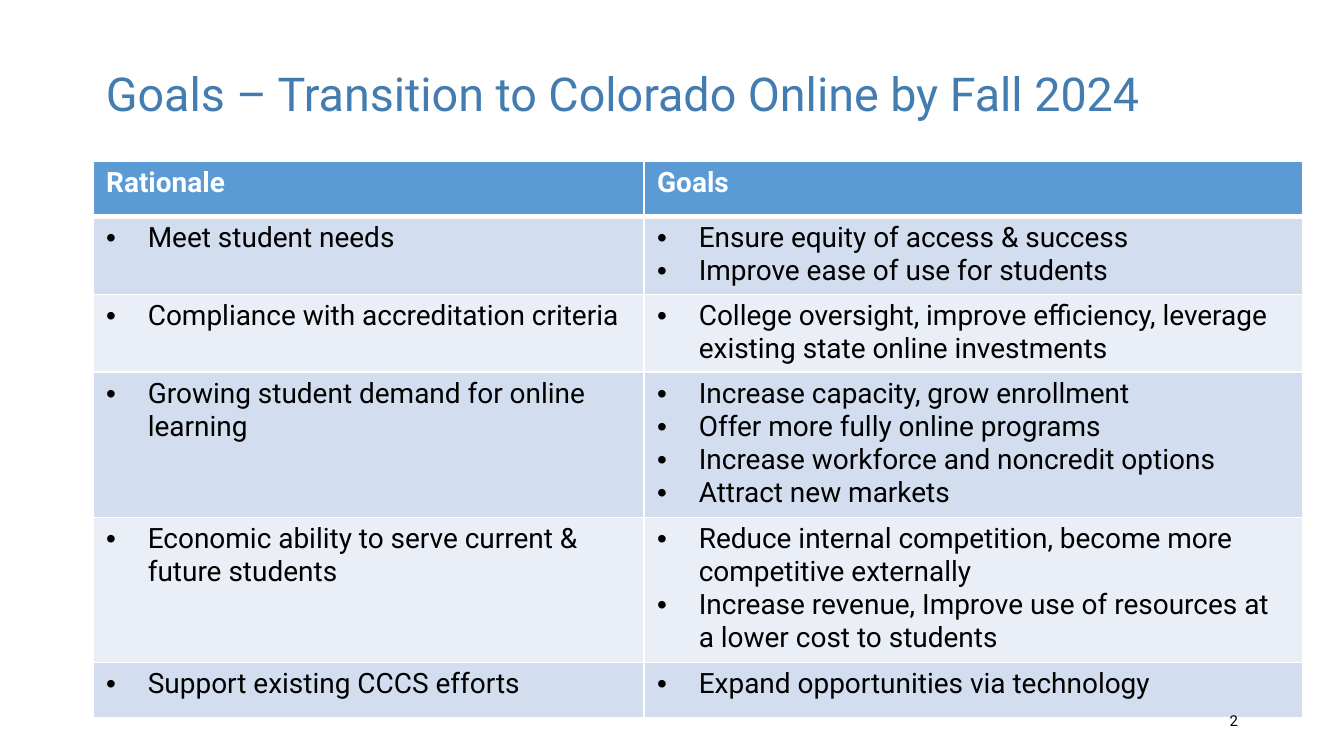
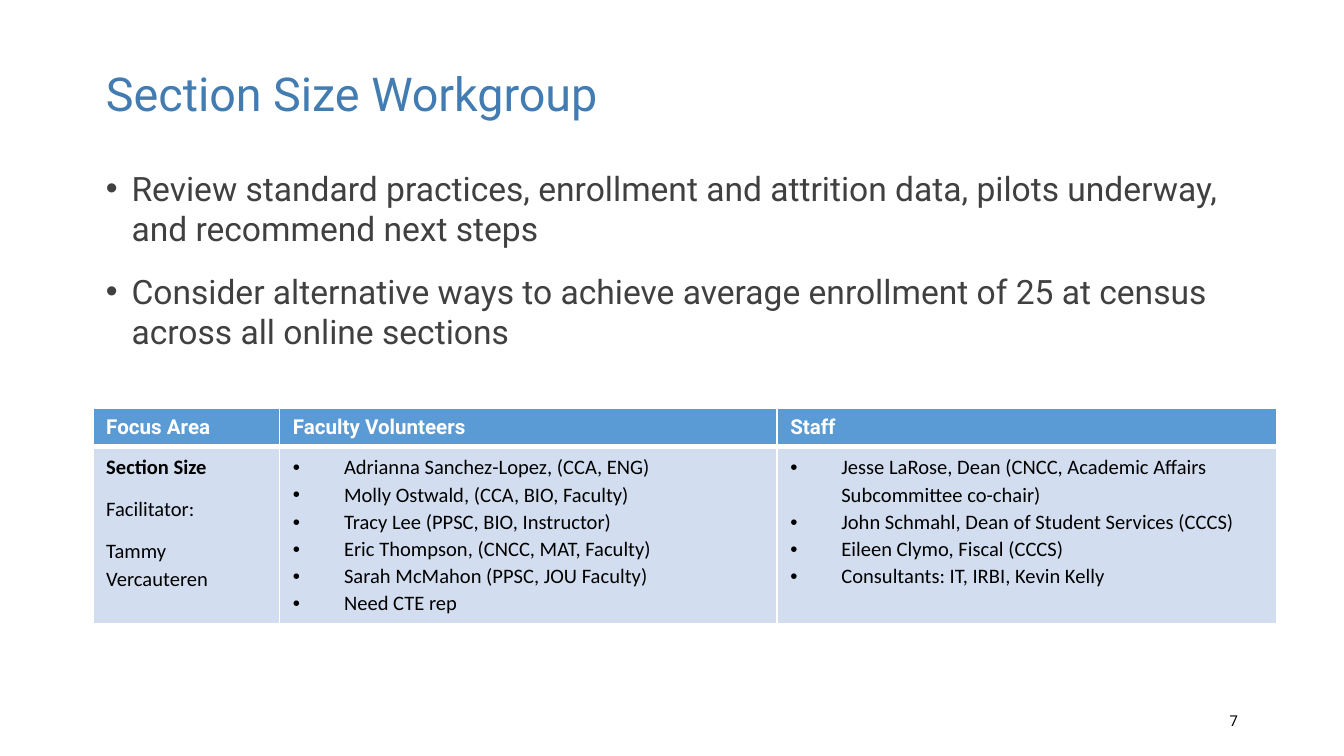
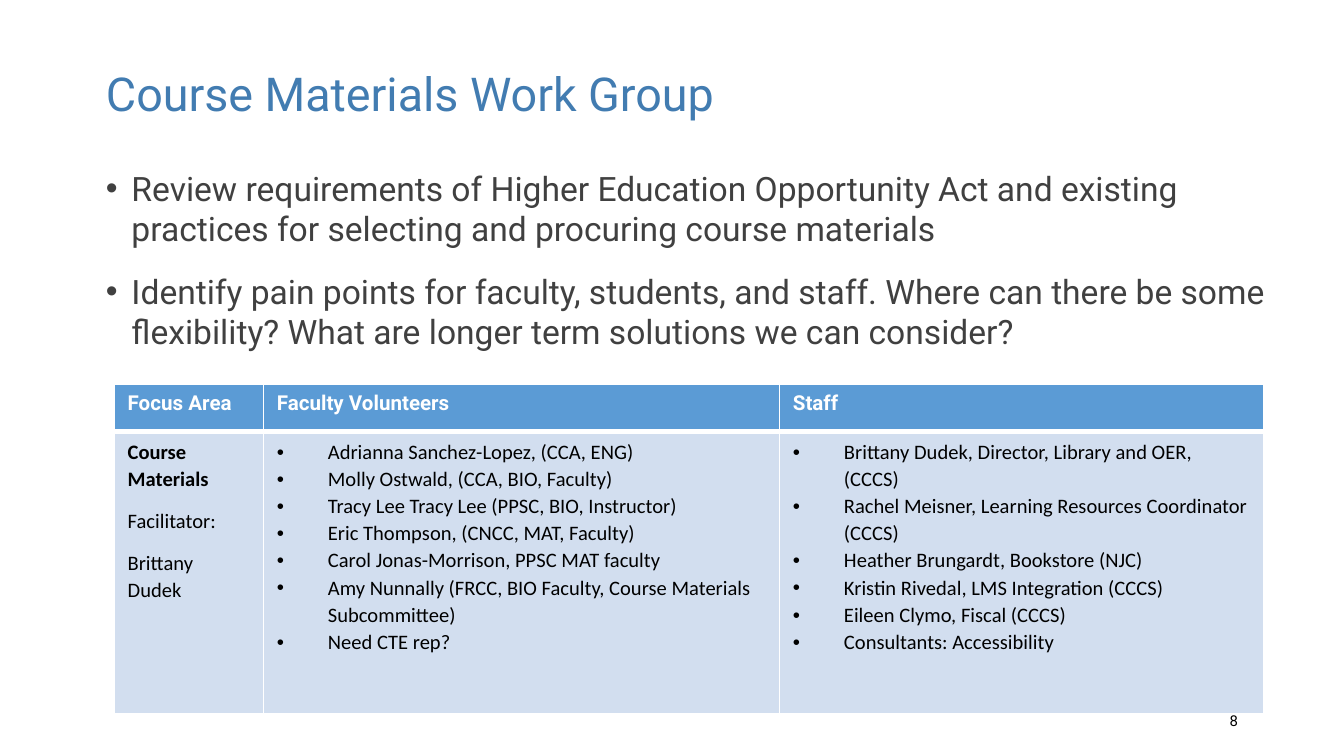
from dataclasses import dataclass
from typing import Any, Optional

from lxml import etree
from pptx import Presentation
from pptx import util as u
from pptx.dml import color
from pptx.enum import text
from pptx.oxml import ns


@dataclass(frozen=True)
class Theme:
    title: str = "427CB1"
    body: str = "404040"
    ink: str = "000000"
    white: str = "FFFFFF"
    header: str = "5B9BD5"
    bands: tuple[str, str] = ("D2DEEF", "EAEFF7")
    font: str = "Roboto"
    roster_font: str = "Calibri"
    title_size: float = 25
    body_size: float = 18
    goals_size: float = 15
    roster_size: float = 11
    number_size: float = 8
    thin_line: float = 1
    thick_line: float = 3


THEME = Theme()


@dataclass(frozen=True)
class Style:
    """Look of one paragraph; indent is the hanging indent in inches."""
    size: float
    color: str
    font: str = THEME.font
    bold: bool = False
    indent: float = 0
    spacing: Optional[float] = None
    before: float = 0
    after: float = 0
    align: Any = text.PP_ALIGN.LEFT


TITLE = Style(THEME.title_size, THEME.title, spacing=0.9)
BODY = Style(THEME.body_size, THEME.body, indent=0.19, before=6, after=6)
NUMBER = Style(THEME.number_size, THEME.ink, align=text.PP_ALIGN.RIGHT)
GOALS_HEADER = Style(THEME.goals_size, THEME.white, bold=True)
GOALS_ITEM = Style(THEME.goals_size, THEME.ink, indent=0.31)
ROSTER_HEADER = Style(THEME.roster_size, THEME.white, bold=True)
ROSTER_AREA = Style(THEME.roster_size, THEME.ink, THEME.roster_font, True, spacing=1.07, after=8)
ROSTER_LEAD = Style(THEME.roster_size, THEME.ink, THEME.roster_font, spacing=1.07, after=8)
ROSTER_ITEM = Style(THEME.roster_size, THEME.ink, THEME.roster_font, indent=0.38, spacing=1.07)


@dataclass(frozen=True)
class Line:
    words: str
    style: Style


@dataclass(frozen=True)
class Frame:
    left: float
    top: float
    width: float
    height: float


@dataclass(frozen=True)
class Grid:
    left: float
    top: float
    columns: list[float]
    heights: list[float]
    cells: list[list[list[Line]]]
    padding: float = 0.05


@dataclass(frozen=True)
class PageContent:
    title: str
    number: int
    grid: Grid
    points: tuple[str, ...] = ()
    points_width: float = 8.62


# Shared drawing functions
def set_values(target: Any, values: dict[str, Any]) -> None:
    for name, value in values.items():
        setattr(target, name, value)


def lines(style: Style, *words: str) -> list[Line]:
    return [Line(item, style) for item in words]


def write_lines(frame: Any, content: list[Line]) -> None:
    for index, line in enumerate(content):
        style = line.style
        para = frame.add_paragraph() if index else frame.paragraphs[0]
        set_values(para, {
            "alignment": style.align,
            "line_spacing": style.spacing,
            "space_before": u.Pt(style.before),
            "space_after": u.Pt(style.after),
        })
        if style.indent:
            properties = para._p.get_or_add_pPr()
            properties.set("marL", str(u.Inches(style.indent)))
            properties.set("indent", str(-u.Inches(style.indent)))
            etree.SubElement(properties, ns.qn("a:buFont"), typeface="Arial")
            etree.SubElement(properties, ns.qn("a:buChar"), char="•")
        span = para.add_run()
        span.text = line.words
        set_values(span.font, {"size": u.Pt(style.size), "name": style.font, "bold": style.bold})
        span.font.color.rgb = color.RGBColor.from_string(style.color)


def add_text(page: Any, area: Frame, content: list[Line], anchor: Any) -> None:
    box = page.shapes.add_textbox(*map(u.Inches, (area.left, area.top, area.width, area.height)))
    set_values(box.text_frame, {"word_wrap": True, "vertical_anchor": anchor})
    write_lines(box.text_frame, content)


def add_borders(cell: Any, row: int) -> None:
    """Thin white rules, with a thick one below the header."""
    widths = dict.fromkeys(("L", "R", "T", "B"), THEME.thin_line)
    if row < 2:
        widths["T" if row else "B"] = THEME.thick_line
    properties = cell._tc.get_or_add_tcPr()
    for side, width in widths.items():
        rule = etree.SubElement(properties, ns.qn(f"a:ln{side}"), w=str(u.Pt(width)))
        fill = etree.SubElement(rule, ns.qn("a:solidFill"))
        etree.SubElement(fill, ns.qn("a:srgbClr"), val=THEME.white)


def add_grid(page: Any, grid: Grid) -> None:
    size = (sum(grid.columns), sum(grid.heights))
    table = page.shapes.add_table(len(grid.heights), len(grid.columns),
                                  *map(u.Inches, (grid.left, grid.top, *size))).table
    for column, width in zip(table.columns, grid.columns):
        column.width = u.Inches(width)
    padding = u.Inches(grid.padding)
    for row, height in enumerate(grid.heights):
        table.rows[row].height = u.Inches(height)
        band = THEME.bands[(row - 1) % 2] if row else THEME.header
        for cell, content in zip(table.rows[row].cells, grid.cells[row]):
            add_borders(cell, row)
            set_values(cell, {"margin_top": padding, "margin_bottom": padding})
            cell.fill.solid()
            cell.fill.fore_color.rgb = color.RGBColor.from_string(band)
            write_lines(cell.text_frame, content)


def add_page(deck: Any, content: PageContent) -> None:
    page = deck.slides.add_slide(deck.slide_layouts[6])
    middle = text.MSO_ANCHOR.MIDDLE
    add_text(page, Frame(0.69, 0.3, 8.62, 0.84), lines(TITLE, content.title), middle)
    if content.points:
        add_text(page, Frame(0.69, 1.2, content.points_width, 3.86),
                 lines(BODY, *content.points), text.MSO_ANCHOR.TOP)
    add_grid(page, content.grid)
    add_text(page, Frame(7.06, 5.21, 2.25, 0.3), lines(NUMBER, str(content.number)), middle)


# Table contents
def goals_grid(rows: list[tuple[str, list[str]]]) -> Grid:
    header = [lines(GOALS_HEADER, name) for name in ("Rationale", "Goals")]
    cells = [[lines(GOALS_ITEM, reason), lines(GOALS_ITEM, *goals)] for reason, goals in rows]
    return Grid(0.69, 1.2, [4.1, 4.9], [0.41] * (len(rows) + 1), [header, *cells], padding=0.04)


def roster_grid(left: float, top: float, columns: list[float], heights: list[float],
                area: str, lead: str, faculty: list[str], staff: list[str]) -> Grid:
    header = [lines(ROSTER_HEADER, name) for name in ("Focus Area", "Faculty Volunteers", "Staff")]
    focus = lines(ROSTER_AREA, area) + lines(ROSTER_LEAD, "Facilitator:", lead)
    people = [lines(ROSTER_ITEM, *names) for names in (faculty, staff)]
    return Grid(left, top, columns, heights, [header, [focus, *people]])


PAGES = [
    PageContent("Goals – Transition to Colorado Online by Fall 2024", 2, goals_grid([
        ("Meet student needs",
         ["Ensure equity of access & success", "Improve ease of use for students"]),
        ("Compliance with accreditation criteria",
         ["College oversight, improve efficiency, leverage existing state online investments"]),
        ("Growing student demand for online learning",
         ["Increase capacity, grow enrollment", "Offer more fully online programs",
          "Increase workforce and noncredit options", "Attract new markets"]),
        ("Economic ability to serve current & future students",
         ["Reduce internal competition, become more competitive externally",
          "Increase revenue, Improve use of resources at a lower cost to students"]),
        ("Support existing CCCS efforts", ["Expand opportunities via technology"]),
    ])),
    PageContent(
        "Section Size Workgroup", 7,
        roster_grid(
            0.69, 3.04, [1.39, 3.7, 3.72], [0.28, 1.32], "Section Size", "Tammy Vercauteren",
            ["Adrianna Sanchez-Lopez, (CCA, ENG)", "Molly Ostwald, (CCA, BIO, Faculty)",
             "Tracy Lee (PPSC, BIO, Instructor)", "Eric Thompson, (CNCC, MAT, Faculty)",
             "Sarah McMahon (PPSC, JOU Faculty)", "Need CTE rep"],
            ["Jesse LaRose, Dean (CNCC, Academic Affairs Subcommittee co-chair)",
             "John Schmahl, Dean of Student Services (CCCS)", "Eileen Clymo, Fiscal (CCCS)",
             "Consultants: IT, IRBI, Kevin Kelly"]),
        ("Review standard practices, enrollment and attrition data, pilots underway, "
         "and recommend next steps",
         "Consider alternative ways to achieve average enrollment of 25 at census "
         "across all online sections")),
    PageContent(
        "Course Materials Work Group", 8,
        roster_grid(
            0.85, 2.86, [1.11, 3.84, 3.6], [0.35, 2.1], "Course Materials", "Brittany Dudek",
            ["Adrianna Sanchez-Lopez, (CCA, ENG)", "Molly Ostwald, (CCA, BIO, Faculty)",
             "Tracy Lee Tracy Lee (PPSC, BIO, Instructor)", "Eric Thompson, (CNCC, MAT, Faculty)",
             "Carol Jonas-Morrison, PPSC MAT faculty",
             "Amy Nunnally (FRCC, BIO Faculty, Course Materials Subcommittee)", "Need CTE rep?"],
            ["Brittany Dudek, Director, Library and OER, (CCCS)",
             "Rachel Meisner, Learning Resources Coordinator (CCCS)",
             "Heather Brungardt, Bookstore (NJC)", "Kristin Rivedal, LMS Integration (CCCS)",
             "Eileen Clymo, Fiscal (CCCS)", "Consultants: Accessibility"]),
        ("Review requirements of Higher Education Opportunity Act and existing practices "
         "for selecting and procuring course materials",
         "Identify pain points for faculty, students, and staff. Where can there be some "
         "flexibility? What are longer term solutions we can consider?"),
        points_width=8.87),
]


def main() -> None:
    deck = Presentation()
    width = u.Inches(10)
    set_values(deck, {"slide_width": width, "slide_height": width * 9 // 16})
    for content in PAGES:
        add_page(deck, content)
    deck.save("out.pptx")


if __name__ == "__main__":
    main()
